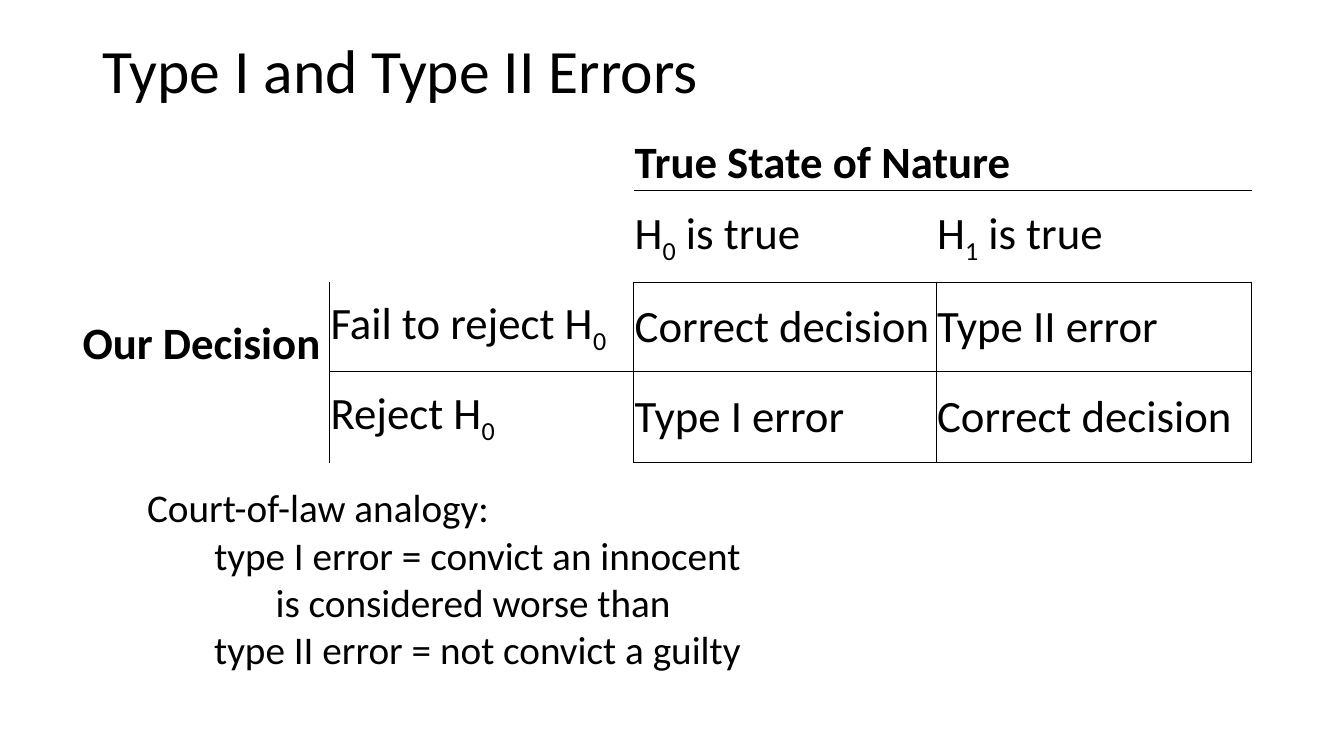
import pptx
import pptx.dml.color
import pptx.enum.text
import pptx.oxml
import pptx.oxml.ns
import pptx.util
from dataclasses import dataclass

Pt = pptx.util.Pt
ALIGN = pptx.enum.text.PP_ALIGN
ANCHOR = pptx.enum.text.MSO_ANCHOR
NO_GRID_STYLE = "{2D5ABB26-0587-4C30-8999-92F81FD0307C}"


@dataclass(frozen=True)
class Theme:
    font: str = "Calibri"
    ink: str = "000000"
    title: int = 44
    table: int = 32
    note: int = 28
    thin: float = 0.5
    thick: float = 1


class SlideBuilder:
    def __init__(self, prs, theme):
        self.theme = theme
        self.s = prs.slides.add_slide(prs.slide_layouts[5])

    def style(self, p, size, bold=False, align=ALIGN.LEFT):
        p.alignment = align
        p.font.name = self.theme.font
        p.font.size = Pt(size)
        p.font.bold = bold
        p.font.color.rgb = pptx.dml.color.RGBColor.from_string(self.theme.ink)

    def title(self, text, left, top, width, height):
        sp = self.s.shapes.title
        sp.left, sp.top, sp.width, sp.height = map(Pt, (left, top, width, height))
        tf = sp.text_frame
        tf.text = text
        tf.auto_size = pptx.enum.text.MSO_AUTO_SIZE.NONE
        tf.vertical_anchor = ANCHOR.MIDDLE
        p = tf.paragraphs[0]
        p.line_spacing = 0.9
        self.style(p, self.theme.title)

    def table(self, left, top, widths, heights):
        frame = self.s.shapes.add_table(
            len(heights), len(widths), Pt(left), Pt(top),
            Pt(sum(widths)), Pt(sum(heights)))
        table = frame.table
        table.first_row = table.horz_banding = False
        table._tbl.tblPr.find(pptx.oxml.ns.qn("a:tableStyleId")).text = NO_GRID_STYLE
        for column, width in zip(table.columns, widths):
            column.width = Pt(width)
        for row, height in zip(table.rows, heights):
            row.height = Pt(height)
        for cell in table.iter_cells():
            cell.fill.background()
        return table

    def cell(self, cell, text, bold=False, align=ALIGN.LEFT, anchor=ANCHOR.MIDDLE):
        """Fill a cell; the character after an underscore is a subscript."""
        cell.margin_left = cell.margin_right = cell.margin_top = Pt(0.72)
        cell.margin_bottom = 0
        cell.vertical_anchor = anchor
        p = cell.text_frame.paragraphs[0]
        head, mark, tail = text.partition("_")
        for part, baseline in ((head, 0), (tail[:1], -25000), (tail[1:], 0)):
            if part:
                r = p.add_run()
                r.text = part
                if baseline:
                    r.font._element.set("baseline", str(baseline))
        self.style(p, self.theme.table, bold, align)

    def borders(self, table, across, down):
        """Rule lines below rows (across) and right of columns (down)."""
        edges = {}
        for row, cols, width in across:
            for col in cols:
                edges[row, col, "B"] = edges[row + 1, col, "T"] = width
        for col, rows, width in down:
            for row in rows:
                edges[row, col, "R"] = edges[row, col + 1, "L"] = width
        n_rows, n_cols = len(table.rows), len(table.columns)
        for side in "BTRL":
            for (row, col, edge), width in edges.items():
                if edge == side and row < n_rows and col < n_cols:
                    ln = pptx.oxml.parse_xml(
                        f'<a:ln{side} {pptx.oxml.ns.nsdecls("a")} w="{Pt(width)}">'
                        f'<a:solidFill><a:srgbClr val="{self.theme.ink}"/></a:solidFill>'
                        f'</a:ln{side}>')
                    table.cell(row, col)._tc.get_or_add_tcPr().insert(0, ln)

    def note(self, lines, left, top, width, height):
        sp = self.s.shapes.add_textbox(Pt(left), Pt(top), Pt(width), Pt(height))
        tf = sp.text_frame
        tf.word_wrap = True
        tf.auto_size = pptx.enum.text.MSO_AUTO_SIZE.SHAPE_TO_FIT_TEXT
        for i, (text, align) in enumerate(lines):
            p = tf.paragraphs[0] if i == 0 else tf.add_paragraph()
            p.text = text
            self.style(p, self.theme.note, align=align)


def main():
    prs = pptx.Presentation()
    prs.slide_width, prs.slide_height = Pt(960), Pt(540)
    theme = Theme()
    slide = SlideBuilder(prs, theme)

    # Title
    slide.title("Type I and Type II Errors", 66, 0, 828, 104.4)

    # Decision table
    table = slide.table(52.6, 83.6, (182.8, 217.3, 216, 225.4), (52.6, 65.4, 63.6, 65.4))
    table.cell(0, 2).merge(table.cell(0, 3))
    slide.cell(table.cell(0, 2), "True State of Nature", bold=True, anchor=ANCHOR.BOTTOM)
    slide.cell(table.cell(2, 0), "Our Decision", bold=True, align=ALIGN.CENTER,
               anchor=ANCHOR.BOTTOM)
    outcomes = (
        ("", "H_0 is true", "H_1 is true"),
        ("Fail to reject H_0", "Correct decision", "Type II error"),
        ("Reject H_0", "Type I error", "Correct decision"),
    )
    for row, texts in enumerate(outcomes, 1):
        for col, text in enumerate(texts, 1):
            if text:
                slide.cell(table.cell(row, col), text)

    # Table rules: thick frame around the outcomes, thin lines elsewhere
    body = (2, 3)
    slide.borders(
        table,
        across=((0, body, theme.thin), (1, body, theme.thick),
                (2, (1, 2, 3), theme.thin), (3, body, theme.thick)),
        down=((0, body, theme.thin), (1, body, theme.thick),
              (2, body, theme.thin), (3, body, theme.thick)))

    # Analogy
    slide.note((
        ("Court-of-law analogy:", ALIGN.LEFT),
        ("type I error = convict an innocent", ALIGN.CENTER),
        ("is considered worse than ", ALIGN.CENTER),
        ("type II error = not convict a guilty", ALIGN.CENTER),
    ), 98, 342, 486, 143.3)

    prs.save("out.pptx")


if __name__ == "__main__":
    main()
